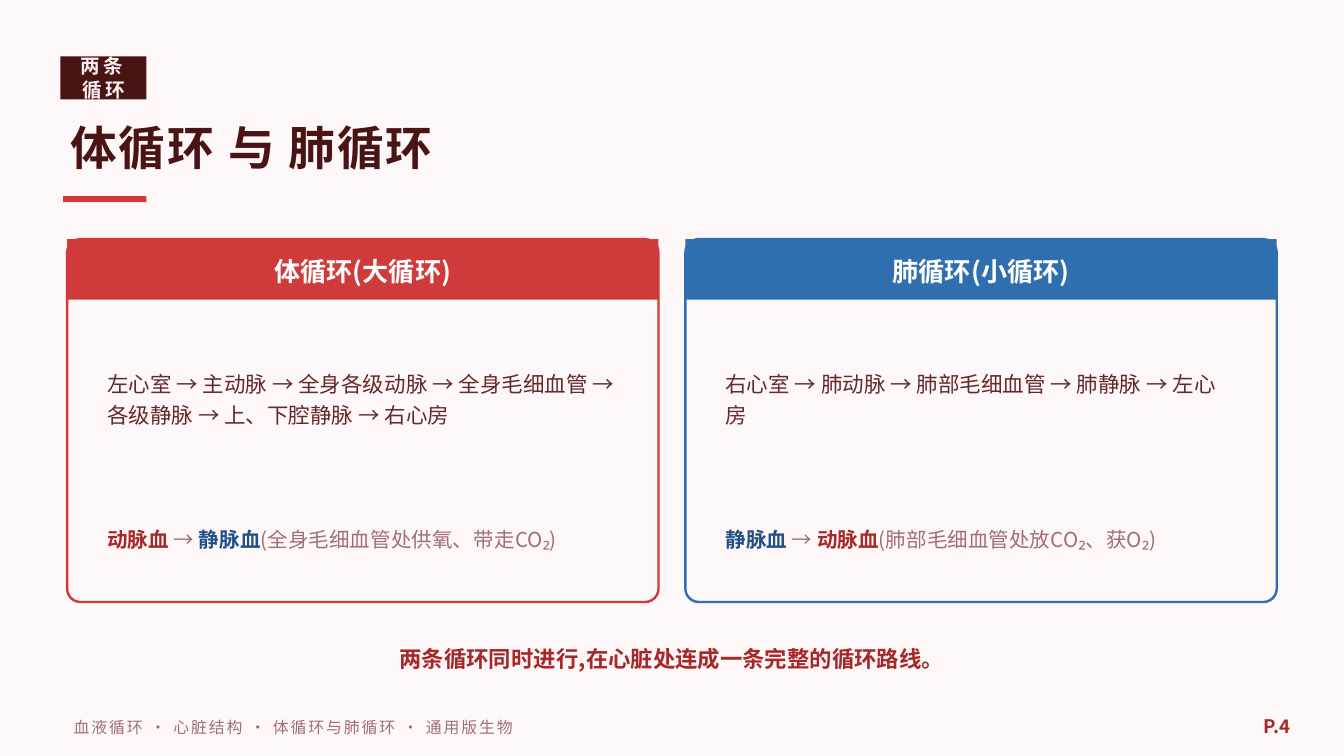
"""Build a slide that compares the systemic and pulmonary circulations."""
from dataclasses import dataclass

from lxml.etree import SubElement
from pptx import Presentation
from pptx.dml.color import RGBColor
from pptx.enum.shapes import MSO_SHAPE as Preset
from pptx.enum.text import MSO_ANCHOR as Anchor, MSO_AUTO_SIZE as AutoSize, PP_ALIGN as Align
from pptx.oxml.ns import qn
from pptx.shapes.base import BaseShape
from pptx.slide import Slide
from pptx.util import Inches, Pt

FONT = "Noto Sans CJK SC"
CELL = Inches(0.1)
COLUMNS, ROWS = 100, 56.25
BACKGROUND = RGBColor(0xFE, 0xF7, 0xF8)
DARK = RGBColor(0x4A, 0x14, 0x14)
PALE = RGBColor(0xFB, 0xEE, 0xF0)
WHITE = RGBColor(0xFF, 0xFF, 0xFF)
RED = RGBColor(0xCF, 0x3B, 0x3B)
BLUE = RGBColor(0x2F, 0x6F, 0xB0)
DEEP_RED = RGBColor(0xA6, 0x28, 0x28)
DEEP_BLUE = RGBColor(0x23, 0x4F, 0x86)
BROWN = RGBColor(0x63, 0x2A, 0x2A)
MUTED = RGBColor(0xA0, 0x70, 0x70)


@dataclass(frozen=True)
class Box:
    """A place on the grid, in columns and rows."""
    column: float
    row: float
    columns: float
    rows: float

    def lengths(self) -> tuple[int, ...]:
        """Return left, top, width and height."""
        return tuple(round(value * CELL) for value in (self.column, self.row, self.columns, self.rows))


@dataclass(frozen=True)
class Run:
    """A stretch of text in one colour and weight."""
    text: str
    color: RGBColor
    bold: bool = False


@dataclass(frozen=True)
class Circulation:
    """The content of one card."""
    heading: str
    color: RGBColor
    route: str
    exchange: tuple[Run, ...]


ARTERIAL = Run("动脉血", DEEP_RED, True)
VENOUS = Run("静脉血", DEEP_BLUE, True)
ARROW = Run(" → ", MUTED)
CIRCULATIONS = (
    Circulation(
        "体循环(大循环)", RED,
        "左心室 → 主动脉 → 全身各级动脉 → 全身毛细血管 → 各级静脉 → 上、下腔静脉 → 右心房",
        (ARTERIAL, ARROW, VENOUS, Run("(全身毛细血管处供氧、带走CO₂)", MUTED))),
    Circulation(
        "肺循环(小循环)", BLUE,
        "右心室 → 肺动脉 → 肺部毛细血管 → 肺静脉 → 左心房",
        (VENOUS, ARROW, ARTERIAL, Run("(肺部毛细血管处放CO₂、获O₂)", MUTED))),
)
CARD_COLUMNS, CARD_GAP, CARD_LEFT = 44, 2, 5


def write_text(shape: BaseShape, *runs: Run, size: float, align: Align = Align.LEFT,
               spacing: float = 0, leading: float | None = None) -> None:
    """Write one formatted paragraph into a shape."""
    frame = shape.text_frame
    frame.word_wrap = True
    frame.auto_size = AutoSize.NONE
    frame.vertical_anchor = Anchor.MIDDLE
    paragraph = frame.paragraphs[0]
    paragraph.alignment = align
    if leading:
        paragraph.line_spacing = Pt(leading)
    for part in runs:
        run = paragraph.add_run()
        run.text = part.text
        font = run.font
        font.name, font.size, font.bold = FONT, Pt(size), part.bold
        font.color.rgb = part.color
        properties = run._r.get_or_add_rPr()
        SubElement(properties, qn("a:ea")).set("typeface", FONT)
        if spacing:
            properties.set("spc", str(round(spacing * 100)))


def add_text(slide: Slide, box: Box, *runs: Run, **text_format) -> None:
    """Add a text box with one paragraph."""
    write_text(slide.shapes.add_textbox(*box.lengths()), *runs, **text_format)


def add_block(slide: Slide, box: Box, fill: RGBColor, preset: Preset = Preset.RECTANGLE) -> BaseShape:
    """Add a flat filled shape without an outline."""
    shape = slide.shapes.add_shape(preset, *box.lengths())
    shape.shadow.inherit = False
    shape.fill.solid()
    shape.fill.fore_color.rgb = fill
    shape.line.fill.background()
    return shape


def add_card(slide: Slide, left: float, circulation: Circulation) -> None:
    """Add a card with its heading band, route and gas exchange."""
    frame = add_block(slide, Box(left, 17.8, CARD_COLUMNS, 27), BACKGROUND, Preset.ROUNDED_RECTANGLE)
    frame.adjustments[0] = 0.037
    frame.line.color.rgb = circulation.color
    frame.line.width = Pt(1.3)
    add_block(slide, Box(left, 17.8, CARD_COLUMNS, 4.5), circulation.color)
    add_text(slide, Box(left, 17.9, CARD_COLUMNS, 4.5), Run(circulation.heading, WHITE, True),
             size=14, align=Align.CENTER)
    add_text(slide, Box(left + 2, 24, CARD_COLUMNS - 4, 11), Run(circulation.route, BROWN),
             size=11.5, leading=17)
    add_text(slide, Box(left + 2, 37, CARD_COLUMNS - 4, 6), *circulation.exchange, size=11, leading=15)


def main() -> None:
    """Create and save the presentation."""
    presentation = Presentation()
    presentation.slide_width = COLUMNS * CELL
    presentation.slide_height = round(ROWS * CELL)
    slide = presentation.slides.add_slide(presentation.slide_layouts[5])
    slide.background.fill.solid()
    slide.background.fill.fore_color.rgb = BACKGROUND

    title = slide.shapes.title
    title.left, title.top, title.width, title.height = Box(4.25, 7.8, 90, 6.2).lengths()
    write_text(title, Run("体循环 与 肺循环", DARK, True), size=25, spacing=1)
    add_block(slide, Box(4.5, 4.2, 6.4, 3.2), DARK)
    add_text(slide, Box(4.5, 4.1, 6.4, 3.4), Run("两条循环", PALE, True),
             size=10.5, align=Align.CENTER, spacing=2)
    add_block(slide, Box(4.7, 14.6, 6.2, 0.45), RED)

    for index, circulation in enumerate(CIRCULATIONS):
        add_card(slide, CARD_LEFT + index * (CARD_COLUMNS + CARD_GAP), circulation)

    add_text(slide, Box(5, 47, 90, 4), Run("两条循环同时进行,在心脏处连成一条完整的循环路线。", DEEP_RED, True),
             size=12, align=Align.CENTER)
    add_text(slide, Box(4.5, 52.6, 65, 3), Run("血液循环 · 心脏结构 · 体循环与肺循环 · 通用版生物", MUTED),
             size=8.5, spacing=1)
    add_text(slide, Box(91, 52.45, 6, 3.2), Run("P.4", DEEP_RED, True), size=10, align=Align.RIGHT)
    presentation.save("out.pptx")


if __name__ == "__main__":
    main()
